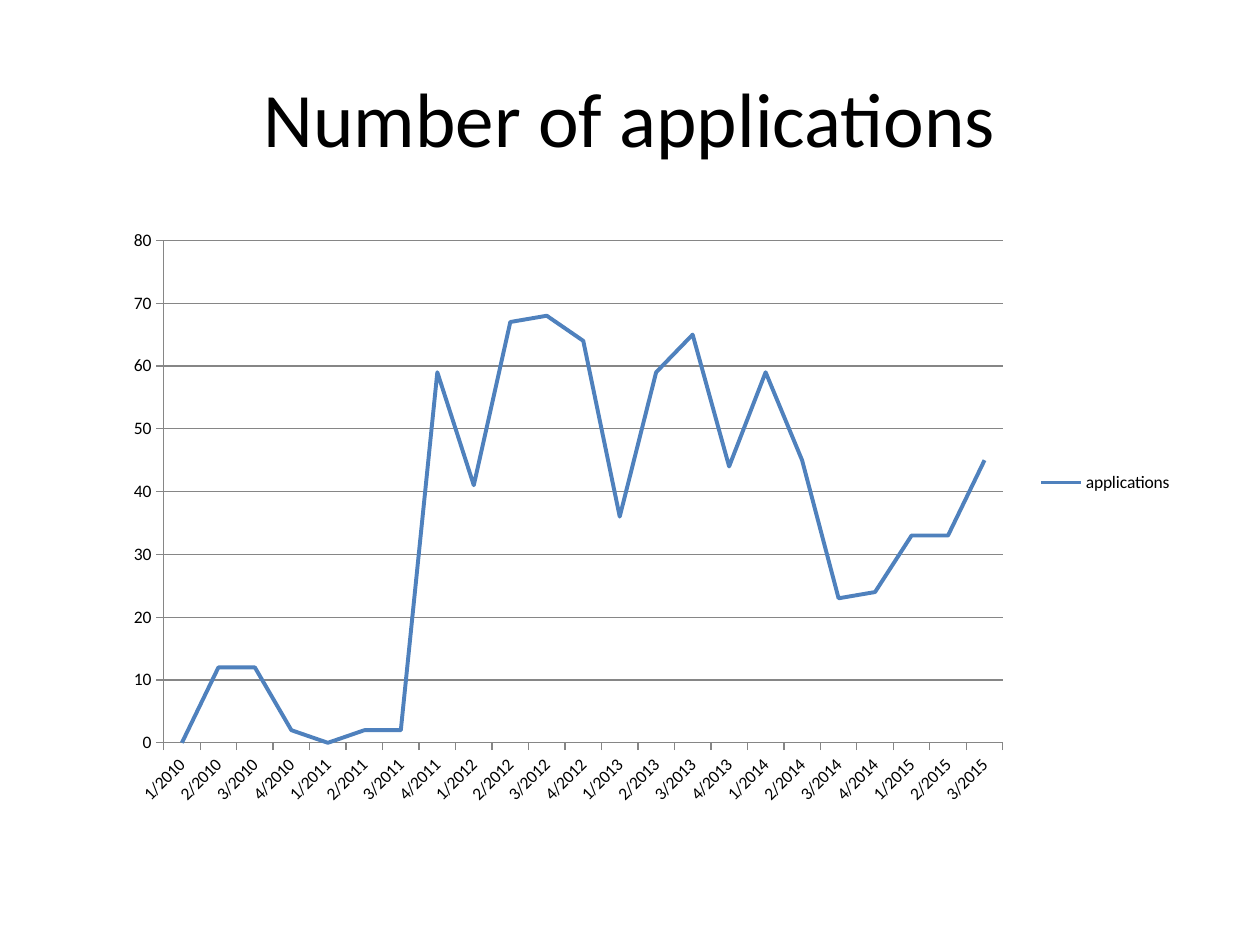
from lxml import etree
from pptx import Presentation
from pptx import util as u
from pptx.chart.data import CategoryChartData
from pptx.dml.color import RGBColor
from pptx.enum import chart as ch
from pptx.enum import text
from pptx.oxml.ns import qn

TITLE = "Number of applications"
SERIES = "applications"
FIRST_YEAR = 2010
APPLICATIONS = [0, 12, 12, 2, 0, 2, 2, 59, 41, 67, 68, 64,
                36, 59, 65, 44, 59, 45, 23, 24, 33, 33, 45]
QUARTERS = [f"{i % 4 + 1}/{FIRST_YEAR + i // 4}" for i in range(len(APPLICATIONS))]

FONT = "Calibri"
BLACK, GREY, BLUE = "000000", "868686", "4F81BD"
TITLE_AREA = (0.5, 0.3, 9, 1.25)
CHART_AREA = (0.67, 0.68, 8.74, 6.3)
# Share of the chart taken by the inner plot
PLOT_AREA = {"x": 0.07, "y": 0.195, "w": 0.76, "h": 0.63}
PLOT_AREA = {"x": 0.072, "y": 0.195, "w": 0.762, "h": 0.633}


def set_font(font, size):
    font.name = FONT
    font.size = u.Pt(size)
    font.color.rgb = RGBColor.from_string(BLACK)


def set_line(line, color, width):
    line.color.rgb = RGBColor.from_string(color)
    line.width = u.Pt(width)


def place_plot(chart):
    """Fix the inner plot area by a manual layout."""
    area = chart._chartSpace.find(".//" + qn("c:plotArea"))
    layout = area.find(qn("c:layout"))
    if layout is None:
        layout = etree.Element(qn("c:layout"))
        area.insert(0, layout)
    manual = etree.SubElement(layout, qn("c:manualLayout"))
    settings = {"layoutTarget": "inner", "xMode": "edge", "yMode": "edge", **PLOT_AREA}
    for name, value in settings.items():
        etree.SubElement(manual, qn("c:" + name), val=str(value))


def add_title(page):
    box = page.shapes.add_textbox(*map(u.Inches, TITLE_AREA))
    frame = box.text_frame
    frame.word_wrap = True
    frame.vertical_anchor = text.MSO_ANCHOR.MIDDLE
    para = frame.paragraphs[0]
    para.alignment = text.PP_ALIGN.CENTER
    span = para.add_run()
    span.text = TITLE
    set_font(span.font, 44)


def add_line_chart(page):
    data = CategoryChartData()
    data.categories = QUARTERS
    data.add_series(SERIES, APPLICATIONS)
    chart = page.shapes.add_chart(
        ch.XL_CHART_TYPE.LINE_STACKED, *map(u.Inches, CHART_AREA), data).chart
    set_font(chart.font, 10)
    chart.has_title = False
    chart.has_legend = True
    chart.legend.position = ch.XL_LEGEND_POSITION.RIGHT
    chart.legend.include_in_layout = False
    place_plot(chart)

    for axis in (chart.category_axis, chart.value_axis):
        axis.major_tick_mark = ch.XL_TICK_MARK.OUTSIDE
        axis.minor_tick_mark = ch.XL_TICK_MARK.NONE
        set_line(axis.format.line, GREY, 0.75)
        set_font(axis.tick_labels.font, 10)
    labels = chart.category_axis._element.find(qn("c:txPr"))
    labels.find(qn("a:bodyPr")).set("rot", str(-45 * 60000))
    values = chart.value_axis
    values.minimum_scale, values.maximum_scale, values.major_unit = 0, 80, 10
    values.has_major_gridlines = True
    set_line(values.major_gridlines.format.line, GREY, 0.75)

    plot = chart.plots[0]
    plot.vary_by_categories = False
    series = plot.series[0]
    series.smooth = False
    series.marker.style = ch.XL_MARKER_STYLE.NONE
    set_line(series.format.line, BLUE, 2.25)


def main():
    deck = Presentation()
    deck.slide_width, deck.slide_height = u.Inches(10), u.Inches(7.5)
    page = deck.slides.add_slide(deck.slide_layouts[6])
    add_title(page)
    add_line_chart(page)
    deck.save("out.pptx")


if __name__ == "__main__":
    main()
